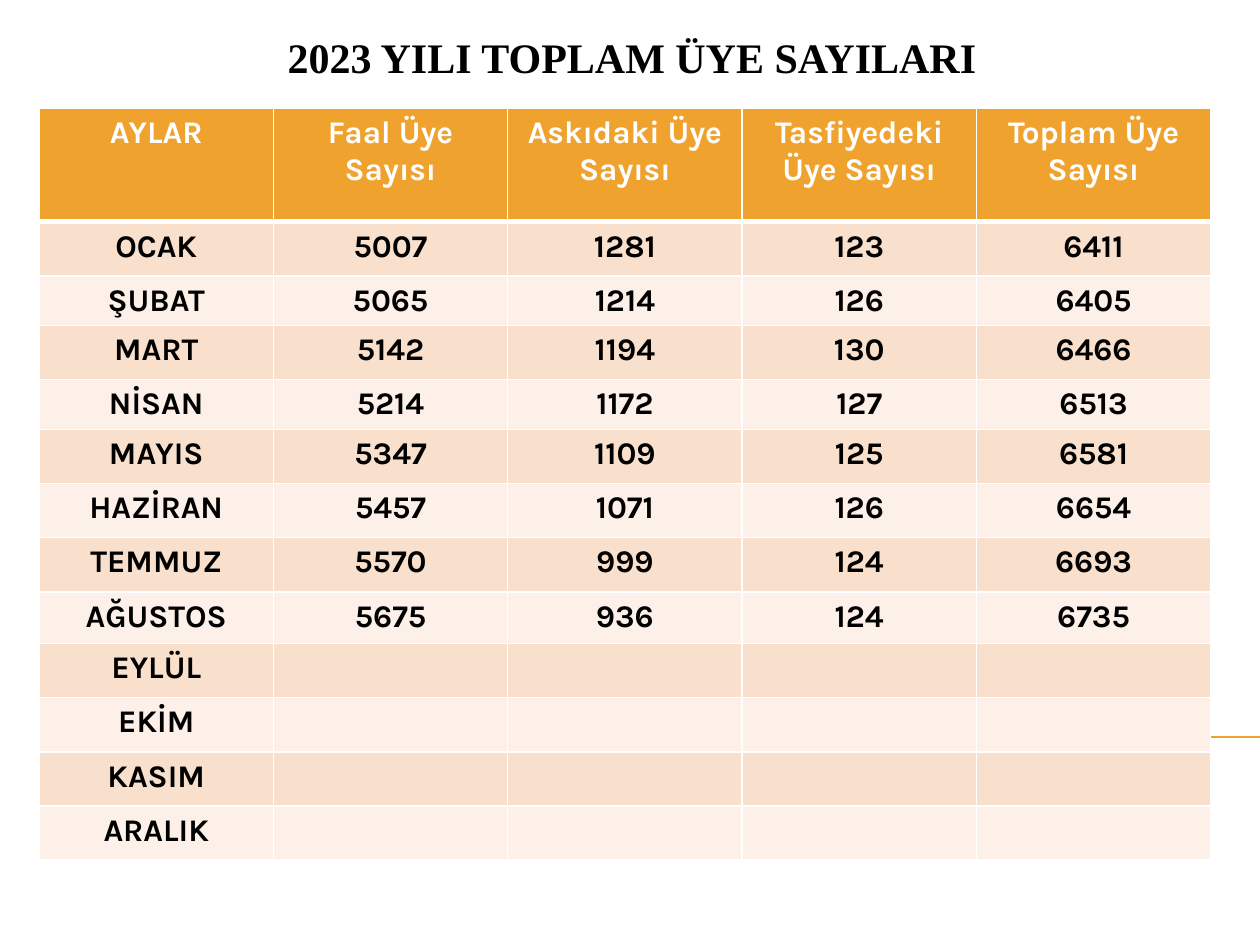
from lxml.etree import SubElement
from pptx import Presentation
from pptx.dml.color import RGBColor
from pptx.enum.shapes import MSO_CONNECTOR as CONN
from pptx.enum.text import MSO_ANCHOR as ANCHOR, PP_ALIGN as ALIGN
from pptx.oxml.ns import qn
from pptx.util import Inches, Pt

TITLE = "2023 YILI TOPLAM ÜYE SAYILARI"
HEADS = ["AYLAR", "Faal Üye Sayısı", "Askıdaki Üye Sayısı",
         "Tasfiyedeki Üye Sayısı", "Toplam Üye Sayısı"]
MONTHS = [
    ("OCAK", 5007, 1281, 123, 6411),
    ("ŞUBAT", 5065, 1214, 126, 6405),
    ("MART", 5142, 1194, 130, 6466),
    ("NİSAN", 5214, 1172, 127, 6513),
    ("MAYIS", 5347, 1109, 125, 6581),
    ("HAZİRAN", 5457, 1071, 126, 6654),
    ("TEMMUZ", 5570, 999, 124, 6693),
    ("AĞUSTOS", 5675, 936, 124, 6735),
    ("EYLÜL",), ("EKİM",), ("KASIM",), ("ARALIK",),
]
HEAD_H, ROW_H = 0.9, 0.43
ODD_H = {"ŞUBAT": 0.39, "NİSAN": 0.35, "AĞUSTOS": 0.41}
COL_W = 1.86
ORANGE, PEACH, CREAM = "F0A22E", "F9E0CD", "FCF0E8"
WHITE, BLACK = "FFFFFF", "000000"


def color(code):
    return RGBColor.from_string(code)


def write(frame, text, font, size, code):
    par = frame.paragraphs[0]
    par.alignment = ALIGN.CENTER
    run = par.add_run()
    run.text = text
    run.font.name = font
    run.font.size = Pt(size)
    run.font.bold = True
    run.font.color.rgb = color(code)


def edge(cell, top, bottom):
    """Draw white cell borders; top and bottom are widths in points."""
    props = cell._tc.get_or_add_tcPr()
    for side, width in (("L", 1), ("R", 1), ("T", top), ("B", bottom)):
        line = SubElement(props, qn(f"a:ln{side}"), w=str(Pt(width)))
        fill = SubElement(line, qn("a:solidFill"))
        SubElement(fill, qn("a:srgbClr"), val=WHITE)


def add_rule(slide):
    y = Inches(5.85)
    rule = slide.shapes.add_connector(
        CONN.STRAIGHT, Inches(0.56), y, Inches(10), y)
    rule.line.color.rgb = color(ORANGE)
    rule.line.width = Pt(0.75)
    SubElement(rule._element.spPr, qn("a:effectLst"))


def add_title(slide):
    title = slide.shapes.title
    title.left, title.top = Inches(0.39), Inches(0.23)
    title.width, title.height = Inches(9.25), Inches(0.47)
    title.text_frame.vertical_anchor = ANCHOR.BOTTOM
    write(title.text_frame, TITLE, "Times New Roman", 24, BLACK)


def add_grid(slide):
    rows = [HEADS] + MONTHS
    highs = [HEAD_H] + [ODD_H.get(m[0], ROW_H) for m in MONTHS]
    cols = len(HEADS)
    table = slide.shapes.add_table(
        len(rows), cols, Inches(0.31), Inches(0.86),
        Inches(COL_W * cols), Inches(sum(highs))).table
    for col in table.columns:
        col.width = Inches(COL_W)
    for r, (row, high) in enumerate(zip(rows, highs)):
        table.rows[r].height = Inches(high)
        back = ORANGE if r == 0 else PEACH if r % 2 else CREAM
        for c in range(cols):
            cell = table.cell(r, c)
            edge(cell, 3 if r == 1 else 1, 3 if r == 0 else 1)
            cell.fill.solid()
            cell.fill.fore_color.rgb = color(back)
            if c < len(row):
                write(cell.text_frame, str(row[c]), "Karla", 18,
                      BLACK if r else WHITE)


def main():
    deck = Presentation()
    deck.slide_width, deck.slide_height = Inches(10), Inches(7.5)
    slide = deck.slides.add_slide(deck.slide_layouts[5])
    add_rule(slide)
    add_title(slide)
    add_grid(slide)
    deck.save("out.pptx")


if __name__ == "__main__":
    main()
